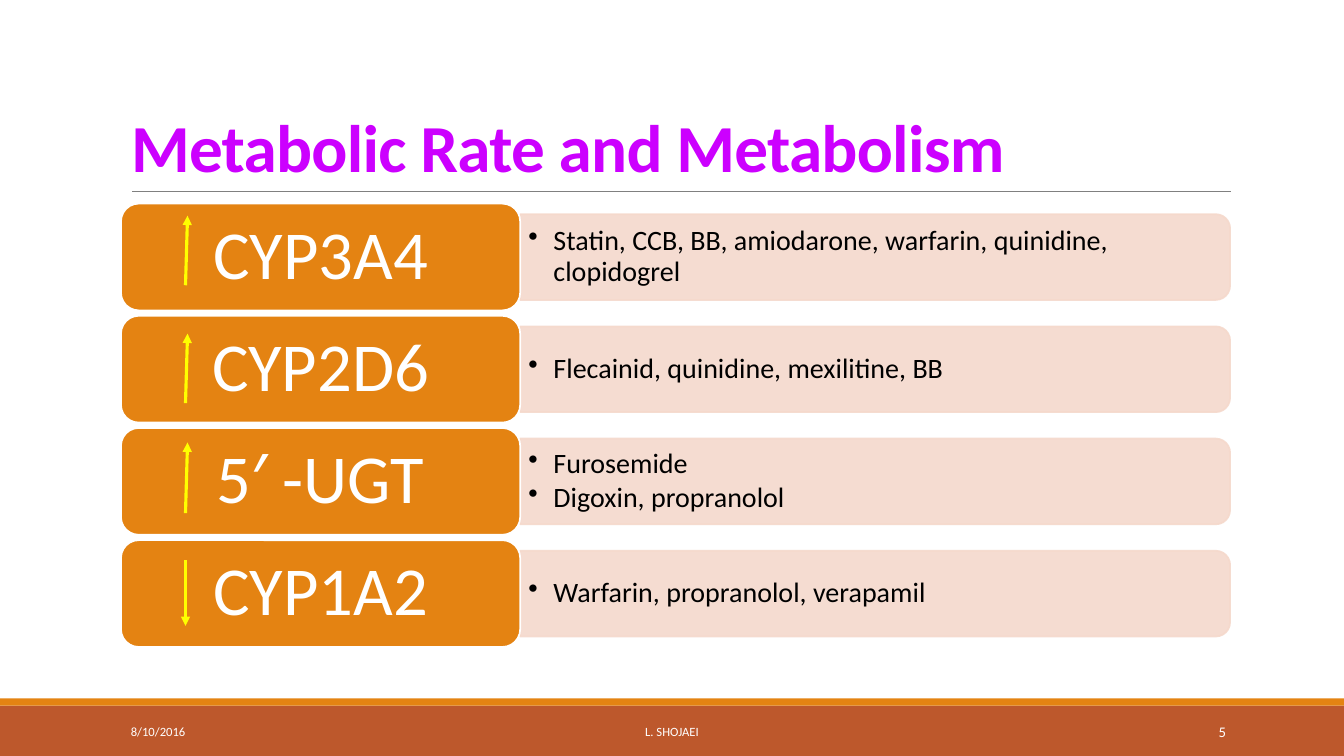
from lxml import etree
from pptx import Presentation
from pptx import util as u
from pptx.dml import color
from pptx.enum import shapes, text
from pptx.oxml import ns

COLORS = {
    "title": "CC00FF", "rule": "808080", "label": "E48312", "panel": "F5D9CC",
    "footer": "BD582C", "arrow": "FFFF00", "dark": "000000", "light": "FFFFFF",
}
LEFT, CENTER, RIGHT = text.PP_ALIGN.LEFT, text.PP_ALIGN.CENTER, text.PP_ALIGN.RIGHT
MIDDLE, BOTTOM = text.MSO_ANCHOR.MIDDLE, text.MSO_ANCHOR.BOTTOM


def rgb(name):
    return color.RGBColor.from_string(COLORS[name])


def add_alpha(fill_format, percent):
    hue = fill_format.fore_color._xFill.find(ns.qn("a:srgbClr"))
    etree.SubElement(hue, ns.qn("a:alpha"), val=str(percent * 1000))


class SlideBuilder:
    font = "Calibri"

    def __init__(self, slide):
        self.slide = slide

    def style(self, paragraph, size, ink, align=LEFT, bold=False):
        paragraph.alignment = align
        paragraph.font.name = self.font
        paragraph.font.size = u.Pt(size)
        paragraph.font.bold = bold
        paragraph.font.color.rgb = rgb(ink)

    def frame(self, shape, side=0.1, edge=0.05, anchor=MIDDLE):
        frame = shape.text_frame
        frame.word_wrap = True
        frame.auto_size = text.MSO_AUTO_SIZE.NONE
        frame.vertical_anchor = anchor
        frame.margin_left = frame.margin_right = u.Inches(side)
        frame.margin_top = frame.margin_bottom = u.Inches(edge)
        return frame

    def title(self, words, *box):
        heading = self.slide.shapes.title
        heading.left, heading.top, heading.width, heading.height = map(u.Inches, box)
        paragraph = self.frame(heading, anchor=BOTTOM).paragraphs[0]
        run = paragraph.add_run()
        run.text = words
        self.style(paragraph, 48, "title", bold=True)
        paragraph.line_spacing = 0.85
        run.font._element.set("spc", "-50")

    def block(self, kind, fill, *box, outline=None):
        shape = self.slide.shapes.add_shape(kind, *map(u.Inches, box))
        shape.shadow.inherit = False
        shape.fill.solid()
        shape.fill.fore_color.rgb = rgb(fill)
        if outline:
            shape.line.color.rgb = rgb(outline)
            shape.line.width = u.Pt(1.25)
        else:
            shape.line.fill.background()
        return shape

    def line(self, start, end, ink, width, arrow=False):
        line = self.slide.shapes.add_connector(
            shapes.MSO_CONNECTOR.STRAIGHT, *map(u.Inches, start + end))
        line.line.color.rgb = rgb(ink)
        line.line.width = u.Pt(width)
        if arrow:
            etree.SubElement(line.line._get_or_add_ln(), ns.qn("a:tailEnd"), type="triangle")
        etree.SubElement(line._element.spPr, ns.qn("a:effectLst"))

    def label(self, words, *box):
        shape = self.block(shapes.MSO_SHAPE.ROUNDED_RECTANGLE, "label", *box, outline="light")
        paragraph = self.frame(shape, 0.2, 0.1).paragraphs[0]
        paragraph.text = words
        paragraph.line_spacing = 0.9
        self.style(paragraph, 49, "light", CENTER)

    def panel(self, left, middle, width, height):
        """Bar with its right corners rounded: a quarter-turned top-rounded shape."""
        bar = self.block(shapes.MSO_SHAPE.ROUND_2_SAME_RECTANGLE, "panel",
                         left + (width - height) / 2, middle - width / 2, height, width,
                         outline="panel")
        bar.rotation = 90
        add_alpha(bar.fill, 90)
        add_alpha(bar.line.fill, 90)

    def bullets(self, items, *box):
        frame = self.frame(self.slide.shapes.add_textbox(*map(u.Inches, box)), 0.08, 0.04)
        for index, item in enumerate(items):
            paragraph = frame.add_paragraph() if index else frame.paragraphs[0]
            paragraph.text = item
            paragraph.line_spacing = 0.9
            paragraph.space_after = u.Pt(3)
            props = paragraph._p.get_or_add_pPr()
            props.set("marL", str(u.Inches(0.25)))
            props.set("indent", str(-u.Inches(0.25)))
            etree.SubElement(props, ns.qn("a:buChar"), char="•")
            self.style(paragraph, 20, "dark")

    def footer(self, words, size, align, left, width):
        box = self.slide.shapes.add_textbox(*map(u.Inches, (left, 7.06, width, 0.4)))
        paragraph = self.frame(box).paragraphs[0]
        paragraph.text = words
        self.style(paragraph, size, "light", align)


# Enzyme, affected drugs, arrow start and end
ENZYMES = [
    ("CYP3A4", ["Statin, CCB, BB, amiodarone, warfarin, quinidine, clopidogrel"],
     (1.84, 2.83), (1.86, 2.14)),
    ("CYP2D6", ["Flecainid, quinidine, mexilitine, BB"], (1.84, 4), (1.86, 3.31)),
    ("5′ -UGT", ["Furosemide", "Digoxin, propranolol"], (1.84, 5.09), (1.86, 4.39)),
    ("CYP1A2", ["Warfarin, propranolol, verapamil"], (1.84, 5.56), (1.84, 6.21)),
]
LABEL_LEFT, LABEL_WIDTH, LABEL_HEIGHT = 1.2, 3.96, 1.06
PANEL_LEFT = LABEL_LEFT + LABEL_WIDTH
ROWS_TOP, ROW_PITCH = 2.02, LABEL_HEIGHT * 1.05


def main():
    deck = Presentation()
    deck.slide_width, deck.slide_height = u.Inches(13.33), u.Inches(7.5)
    page = SlideBuilder(deck.slides.add_slide(deck.slide_layouts[5]))

    # Footer bands, heading and rule
    page.block(shapes.MSO_SHAPE.RECTANGLE, "footer", 0, 7, 13.33, 0.5)
    page.block(shapes.MSO_SHAPE.RECTANGLE, "label", 0, 6.93, 13.33, 0.07)
    page.line((1.31, 1.9), (12.21, 1.9), "rule", 0.5)
    page.title("Metabolic Rate and Metabolism", 1.2, 0.31, 11, 1.59)

    # Enzyme rows
    for row, (enzyme, drugs, start, end) in enumerate(ENZYMES):
        top = ROWS_TOP + row * ROW_PITCH
        middle = top + LABEL_HEIGHT / 2
        page.panel(PANEL_LEFT, middle, 7.04, 0.85)
        page.bullets(drugs, PANEL_LEFT, middle - 0.38, 7, 0.76)
        page.label(enzyme, LABEL_LEFT, top, LABEL_WIDTH, LABEL_HEIGHT)
        page.line(start, end, "arrow", 2.25, arrow=True)

    # Footer texts
    page.footer("8/10/2016", 9, LEFT, 1.2, 2.7)
    page.footer("L. SHOJAEI", 9, CENTER, 4.03, 5.27)
    page.footer("5", 10.5, RIGHT, 10.83, 1.43)

    deck.save("out.pptx")


if __name__ == "__main__":
    main()
